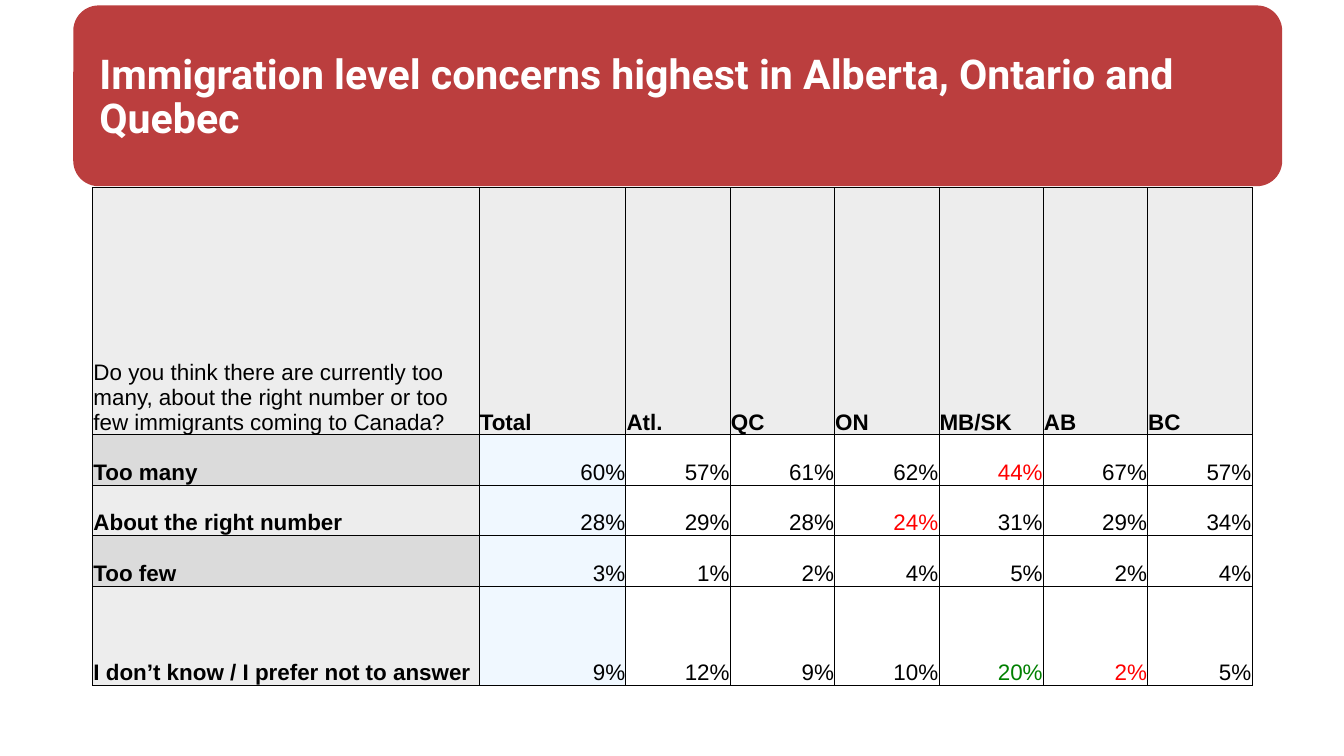
from lxml.etree import SubElement as Sub
from pptx import Presentation
from pptx.dml.color import RGBColor as RGB
from pptx.enum.shapes import MSO_SHAPE as Shape
from pptx.enum.text import MSO_ANCHOR as Anchor, PP_ALIGN as Align
from pptx.oxml.ns import qn
from pptx.util import Pt

WHITE = RGB(0xFF, 0xFF, 0xFF)
BLACK = RGB(0, 0, 0)
BRICK = RGB(0xBB, 0x3E, 0x3E)
RED = RGB(0xFF, 0, 0)
GREEN = RGB(0, 0x80, 0)
PALE = RGB(0xED, 0xED, 0xED)
GREY = RGB(0xDB, 0xDB, 0xDB)
BLUE = RGB(0xF0, 0xF8, 0xFF)

TITLE = "Immigration level concerns highest in Alberta, Ontario and Quebec"
ASK = ("Do you think there are currently too many, about the right number "
       "or too few immigrants coming to Canada?")
HEADS = ["Total", "Atl.", "QC", "ON", "MB/SK", "AB", "BC"]
ROWS = [
    ("Too many", [60, 57, 61, 62, 44, 67, 57]),
    ("About the right number", [28, 29, 28, 24, 31, 29, 34]),
    ("Too few", [3, 1, 2, 4, 5, 2, 4]),
    ("I don’t know / I prefer not to answer", [9, 12, 9, 10, 20, 2, 5]),
]
MARKS = {(1, 5): RED, (2, 4): RED, (4, 5): GREEN, (4, 6): RED}
WIDTHS = [414, 157.2] + [111.8] * 6
HEIGHTS = [265, 54, 54, 54, 106.8]


def write(frame, text, size=24, font="Arial", color=BLACK, bold=False,
          align=Align.LEFT, space=1.0):
    """Put one formatted paragraph in a text frame."""
    para = frame.paragraphs[0]
    para.alignment = align
    para.line_spacing = space
    run = para.add_run()
    run.text = text
    run.font.size = Pt(size)
    run.font.name = font
    run.font.bold = bold
    run.font.color.rgb = color


def frame_cell(cell):
    """Draw a thin line on all four sides of a cell."""
    props = cell._tc.get_or_add_tcPr()
    for side in ("a:lnL", "a:lnR", "a:lnT", "a:lnB"):
        line = Sub(props, qn(side), w=str(Pt(1)))
        fill = Sub(line, qn("a:solidFill"))
        Sub(fill, qn("a:srgbClr"), val=str(BLACK))


def add_cell(cell, text, fill, **style):
    """Fill one table cell with its border, colour and text."""
    frame_cell(cell)
    cell.fill.solid()
    cell.fill.fore_color.rgb = fill
    cell.vertical_anchor = Anchor.BOTTOM
    cell.margin_left = cell.margin_right = cell.margin_top = Pt(0.7)
    cell.margin_bottom = Pt(0)
    write(cell.text_frame, text, **style)


def add_banner(slide, left, top, width, height):
    """Place the rounded banner with the title inside it."""
    shape = slide.shapes.add_shape(
        Shape.ROUNDED_RECTANGLE, Pt(left), Pt(top), Pt(width), Pt(height))
    shape.adjustments[0] = 0.14
    shape.shadow.inherit = False
    shape.fill.solid()
    shape.fill.fore_color.rgb = BRICK
    shape.line.fill.background()
    box = slide.shapes.add_textbox(
        Pt(left + 20.9), Pt(top + 20.8), Pt(width - 53.3), Pt(height - 36.7))
    frame = box.text_frame
    frame.word_wrap = True
    frame.vertical_anchor = Anchor.MIDDLE
    write(frame, TITLE, size=44, font="Roboto", color=WHITE, bold=True,
          space=0.9)


def add_grid(slide, left, top):
    """Place the table of answers by region."""
    table = slide.shapes.add_table(
        len(HEIGHTS), len(WIDTHS), Pt(left), Pt(top),
        Pt(sum(WIDTHS)), Pt(sum(HEIGHTS))).table
    table.first_row = table.horz_banding = False
    for col, width in zip(table.columns, WIDTHS):
        col.width = Pt(width)
    for row, height in zip(table.rows, HEIGHTS):
        row.height = Pt(height)
    add_cell(table.cell(0, 0), ASK, PALE)
    for c, head in enumerate(HEADS, 1):
        add_cell(table.cell(0, c), head, PALE, bold=True)
    for r, (label, values) in enumerate(ROWS, 1):
        add_cell(table.cell(r, 0), label, GREY if r % 2 else PALE, bold=True)
        for c, value in enumerate(values, 1):
            add_cell(table.cell(r, c), f"{value}%", BLUE if c == 1 else WHITE,
                     color=MARKS.get((r, c), BLACK), align=Align.RIGHT)


def main():
    """Build the slide and save it."""
    deck = Presentation()
    deck.slide_width, deck.slide_height = Pt(1440), Pt(810)
    slide = deck.slides.add_slide(deck.slide_layouts[6])
    add_banner(slide, 78.5, 5.8, 1295.3, 193.7)
    add_grid(slide, 99.4, 200.9)
    deck.save("out.pptx")


if __name__ == "__main__":
    main()
